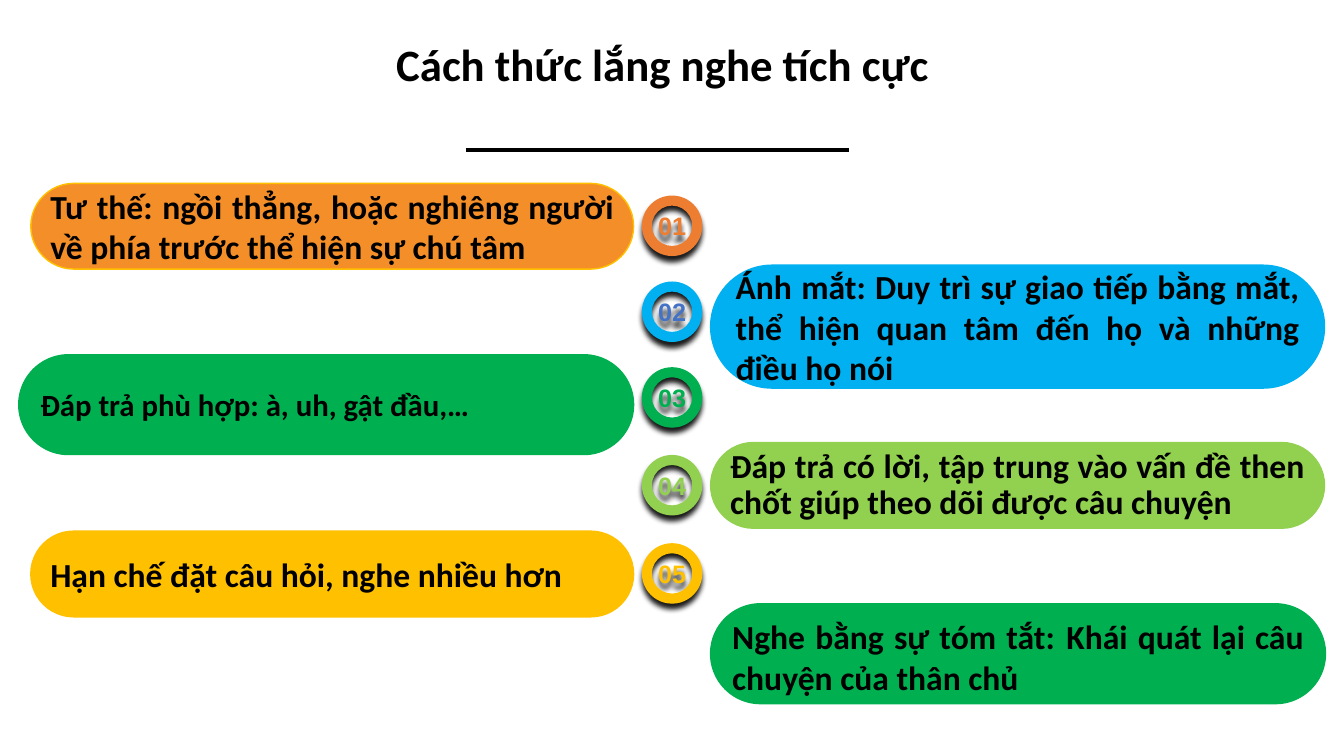
from lxml.etree import SubElement
from pptx import Presentation
from pptx.dml.color import RGBColor
from pptx.enum.shapes import MSO_CONNECTOR, MSO_SHAPE
from pptx.enum.text import MSO_ANCHOR, PP_ALIGN
from pptx.oxml.ns import qn
from pptx.util import Pt

COLORS = {
    "black": "000000", "orange": "F48E29", "rust": "ED7D31", "gold": "FFC000",
    "sky": "00B0F0", "blue": "4472C4", "green": "00B050", "lime": "92D050",
}
TITLE = "Cách thức lắng nghe tích cực"
# side, top, width, height, fill, line, space before, line spacing, runs (text, size)
CARDS = [
    ("left", 131, 430.6, 61.2, "orange", "gold", 0, 1,
     [("Tư thế: ngồi thẳng, hoặc nghiêng người về phía trước thể hiện sự chú tâm", 24)]),
    ("right", 189.4, 438.5, 87.8, "sky", "sky", 0, 1,
     [("Ánh mắt: Duy trì sự giao tiếp bằng mắt, thể hiện quan tâm đến họ và những điều họ nói", 24)]),
    ("left", 253.4, 439.2, 71.3, "green", "green", 0, 1,
     [("Đáp trả phù hợp: à, uh, gật đầu,…", 22)]),
    ("right", 316.1, 438.5, 61.2, "lime", "lime", 0, 0.9,
     [("Đáp trả có lời, tập trung vào vấn đề then chốt giúp theo dõi được câu chuyện", 24)]),
    ("left", 379.4, 430.6, 61.2, "gold", "gold", 10.2, 1,
     [("Hạn chế đặt câu hỏi, nghe nhiều hơn", 24)]),
    ("right", 431.3, 439.2, 71.3, "green", "green", 0, 1,
     [("Nghe bằng sự tóm tắt:", 24), (" ", 28), ("Khái quát lại câu chuyện của thân chủ", 24)]),
]
# top, ring colour, number colour
RINGS = [
    (139.7, "rust", "rust"), (201.1, "sky", "blue"), (262.3, "green", "green"),
    (325, "lime", "lime"), (388, "gold", "gold"),
]
LEFT_EDGE, RIGHT_EDGE = 452.6, 507.6  # inner ends of the two card columns
RING_LEFT, RING_SIZE, RING_BAND = 458.5, 43.2, 7.2


def rgb(name):
    return RGBColor.from_string(COLORS[name])


def set_font(font, name, size, color):
    font.name, font.size, font.bold = name, Pt(size), True
    font.color.rgb = rgb(color)


def set_insets(tf, inset):
    tf.margin_left = tf.margin_right = tf.margin_top = tf.margin_bottom = Pt(inset)
    tf.vertical_anchor = MSO_ANCHOR.MIDDLE


def add_filled(s, kind, box, fill):
    sp = s.shapes.add_shape(kind, *map(Pt, box))
    sp.shadow.inherit = False
    sp.fill.solid()
    sp.fill.fore_color.rgb = rgb(fill)
    return sp


def add_card(s, side, top, width, height, fill, line, before, spacing, runs):
    left = LEFT_EDGE - width if side == "left" else RIGHT_EDGE
    sp = add_filled(s, MSO_SHAPE.ROUNDED_RECTANGLE, (left, top, width, height), fill)
    sp.adjustments[0] = 0.5
    sp.line.color.rgb = rgb(line)
    sp.line.width = Pt(1)
    tf = sp.text_frame
    tf.word_wrap = True
    set_insets(tf, 5)
    p = tf.paragraphs[0]
    p.alignment = PP_ALIGN.JUSTIFY
    p.space_before = Pt(before)
    p.line_spacing = spacing
    set_font(p.font, "Calibri", runs[0][1], "black")
    for text, size in runs:
        r = p.add_run()
        r.text = text
        r.font.size = Pt(size)


def add_drop_shadow(sp):
    effects = sp._element.spPr.find(qn("a:effectLst"))
    shadow = SubElement(effects, qn("a:outerShdw"), blurRad=str(Pt(4)), dist=str(Pt(4)),
                        dir="5400000", algn="t", rotWithShape="0")
    color = SubElement(shadow, qn("a:srgbClr"), val=COLORS["black"])
    SubElement(color, qn("a:alpha"), val="90000")


def add_ring(s, number, top, fill, text_color):
    sp = add_filled(s, MSO_SHAPE.DONUT, (RING_LEFT, top, RING_SIZE, RING_SIZE), fill)
    sp.adjustments[0] = RING_BAND / RING_SIZE
    sp.line.fill.background()
    add_drop_shadow(sp)
    tf = sp.text_frame
    tf.word_wrap = False
    set_insets(tf, 0)
    p = tf.paragraphs[0]
    p.text = f"{number:02d}"
    p.alignment = PP_ALIGN.CENTER
    set_font(p.font, "Arial", 18, text_color)


def add_title(s):
    title = s.shapes.title
    title.left, title.top, title.width, title.height = map(Pt, (86.4, 22.3, 774, 46))
    tf = title.text_frame
    tf.word_wrap = True
    tf.vertical_anchor = MSO_ANCHOR.TOP
    p = tf.paragraphs[0]
    p.text = TITLE
    p.alignment = PP_ALIGN.CENTER
    p.line_spacing = 1
    set_font(p.font, "Calibri", 32, "black")
    rule = s.shapes.add_connector(MSO_CONNECTOR.STRAIGHT, *map(Pt, (332.6, 107.3, 606.2, 107.3)))
    rule.line.color.rgb = rgb("black")
    rule.line.width = Pt(2.5)
    SubElement(rule._element.spPr, qn("a:effectLst"))


def main():
    prs = Presentation()
    prs.slide_width, prs.slide_height = Pt(960), Pt(540)
    s = prs.slides.add_slide(prs.slide_layouts[5])
    add_title(s)
    for card in CARDS:
        add_card(s, *card)
    for number, ring in enumerate(RINGS, 1):
        add_ring(s, number, *ring)
    prs.save("out.pptx")


if __name__ == "__main__":
    main()
